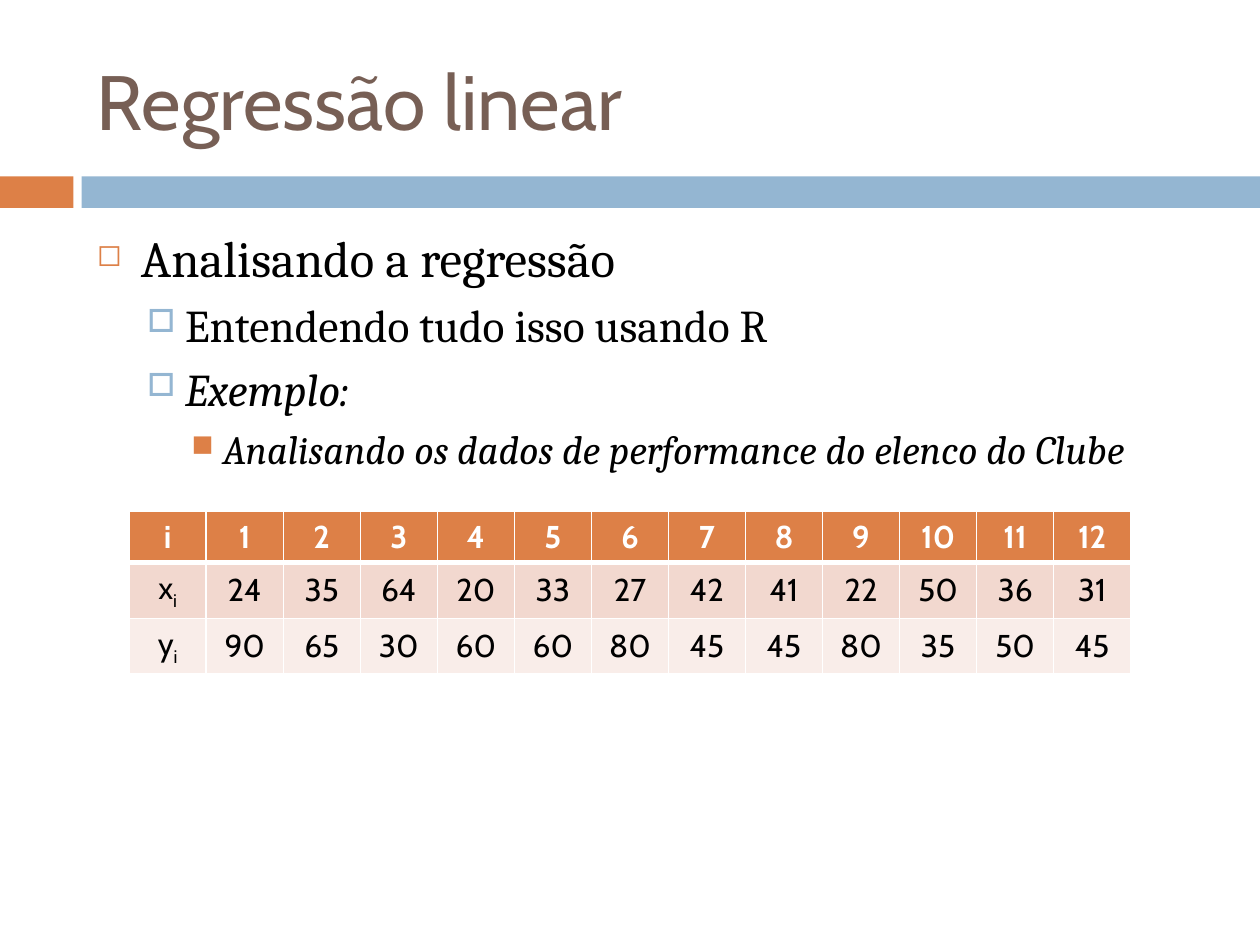
import pptx
import pptx.dml.color
import pptx.enum.shapes
import pptx.enum.text
import pptx.oxml.ns
import pptx.util
from lxml import etree

Pt = pptx.util.Pt
ANCHOR = pptx.enum.text.MSO_ANCHOR

COLORS = {
    "orange": "DD8047",
    "blue": "94B6D2",
    "title": "775F55",
    "text": "000000",
    "white": "FFFFFF",
    "band_dark": "F2D8CF",
    "band_light": "F9EDE9",
}

# Outline level: left indent, hanging, space before, size, bullet, colour, bullet %
LEVELS = [
    (25.2, 25.2, 7, 29, "◻", "orange", 60),
    (50.4, 21.6, 5.5, 26, "□", "blue", 70),
    (72, 18, 5, 23, "■", "orange", 75),
]

OUTLINE = [
    (0, "Analisando a regressão", False),
    (1, "Entendendo tudo isso usando R", False),
    (1, "Exemplo:", True),
    (2, "Analisando os dados de performance do elenco do Clube", True),
]

X_VALUES = [24, 35, 64, 20, 33, 27, 42, 41, 22, 50, 36, 31]
Y_VALUES = [90, 65, 30, 60, 60, 80, 45, 45, 80, 35, 50, 45]


def rgb(name):
    return pptx.dml.color.RGBColor.from_string(COLORS[name])


def add_xml(parent, tag, **attributes):
    return etree.SubElement(parent, pptx.oxml.ns.qn(tag), attributes)


def add_span(para, text, font, size, color, bold=False, italic=False):
    span = para.add_run()
    span.text = text
    span.font.name = font
    span.font.size = Pt(size)
    span.font.bold = bold
    span.font.italic = italic
    span.font.color.rgb = rgb(color)
    return span


def add_bar(page, left, width, color):
    bar = page.shapes.add_shape(
        pptx.enum.shapes.MSO_SHAPE.RECTANGLE, Pt(left), Pt(100.8), Pt(width), Pt(18))
    bar.shadow.inherit = False
    bar.fill.solid()
    bar.fill.fore_color.rgb = rgb(color)
    bar.line.fill.background()


def add_text_frame(page, top, height, anchor):
    box = page.shapes.add_textbox(Pt(48.24), Pt(top), Pt(642.24), Pt(height))
    frame = box.text_frame
    frame.word_wrap = True
    frame.vertical_anchor = anchor
    return frame


def add_outline(page):
    frame = add_text_frame(page, 126, 376.56, ANCHOR.TOP)
    for number, (level, text, italic) in enumerate(OUTLINE):
        indent, hanging, before, size, bullet, color, percent = LEVELS[level]
        para = frame.add_paragraph() if number else frame.paragraphs[0]
        para.level = level
        para.space_before = Pt(before)
        props = para._p.get_or_add_pPr()
        props.set("marL", str(Pt(indent)))
        props.set("indent", str(-Pt(hanging)))
        bullet_color = add_xml(props, "a:buClr")
        add_xml(bullet_color, "a:srgbClr", val=COLORS[color])
        add_xml(props, "a:buSzPct", val=str(percent * 1000))
        add_xml(props, "a:buChar", char=bullet)
        add_span(para, text, "Cambria", size, "text", italic=italic)


def add_borders(cell, widths):
    props = cell._tc.get_or_add_tcPr()
    for side, width in zip("LRTB", widths):
        line = add_xml(props, f"a:ln{side}", w=str(Pt(width)))
        fill = add_xml(line, "a:solidFill")
        add_xml(fill, "a:srgbClr", val=COLORS["white"])


def fill_cell(cell, text, subscript, fill, color, bold, widths):
    add_borders(cell, widths)
    cell.fill.solid()
    cell.fill.fore_color.rgb = rgb(fill)
    cell.vertical_anchor = ANCHOR.MIDDLE
    para = cell.text_frame.paragraphs[0]
    para.alignment = pptx.enum.text.PP_ALIGN.CENTER
    add_span(para, text, "Cabin", 18, color, bold)
    if subscript:
        span = add_span(para, subscript, "Cabin", 18, color, bold)
        span.font._element.set("baseline", "-25000")


def add_data_table(page):
    # Label, subscript, values, fill, text colour, bold, borders (left, right, top, bottom)
    rows = [
        ("i", "", range(1, 13), "orange", "white", True, (1, 1, 1, 3)),
        ("x", "i", X_VALUES, "band_dark", "text", False, (1, 1, 3, 1)),
        ("y", "i", Y_VALUES, "band_light", "text", False, (1, 1, 1, 1)),
    ]
    count = len(X_VALUES) + 1
    table = page.shapes.add_table(
        len(rows), count, Pt(73.8), Pt(292.4), Pt(44.05 * count), Pt(29.2 * len(rows))).table
    table.horz_banding = False
    for column in table.columns:
        column.width = Pt(44.05)
    for r, (label, subscript, values, *style) in enumerate(rows):
        fill_cell(table.cell(r, 0), label, subscript, *style)
        for c, value in enumerate(values, 1):
            fill_cell(table.cell(r, c), str(value), "", *style)


def main():
    deck = pptx.Presentation()
    deck.slide_width, deck.slide_height = Pt(720), Pt(540)
    page = deck.slides.add_slide(deck.slide_layouts[6])

    # Divider under the title
    add_bar(page, 0, 42, "orange")
    add_bar(page, 46.6, 673.4, "blue")

    # Title
    title = add_text_frame(page, 18, 77.76, ANCHOR.MIDDLE)
    add_span(title.paragraphs[0], "Regressão linear", "Cabin", 44, "title")

    # Body text and data
    add_outline(page)
    add_data_table(page)

    deck.save("out.pptx")


if __name__ == "__main__":
    main()
